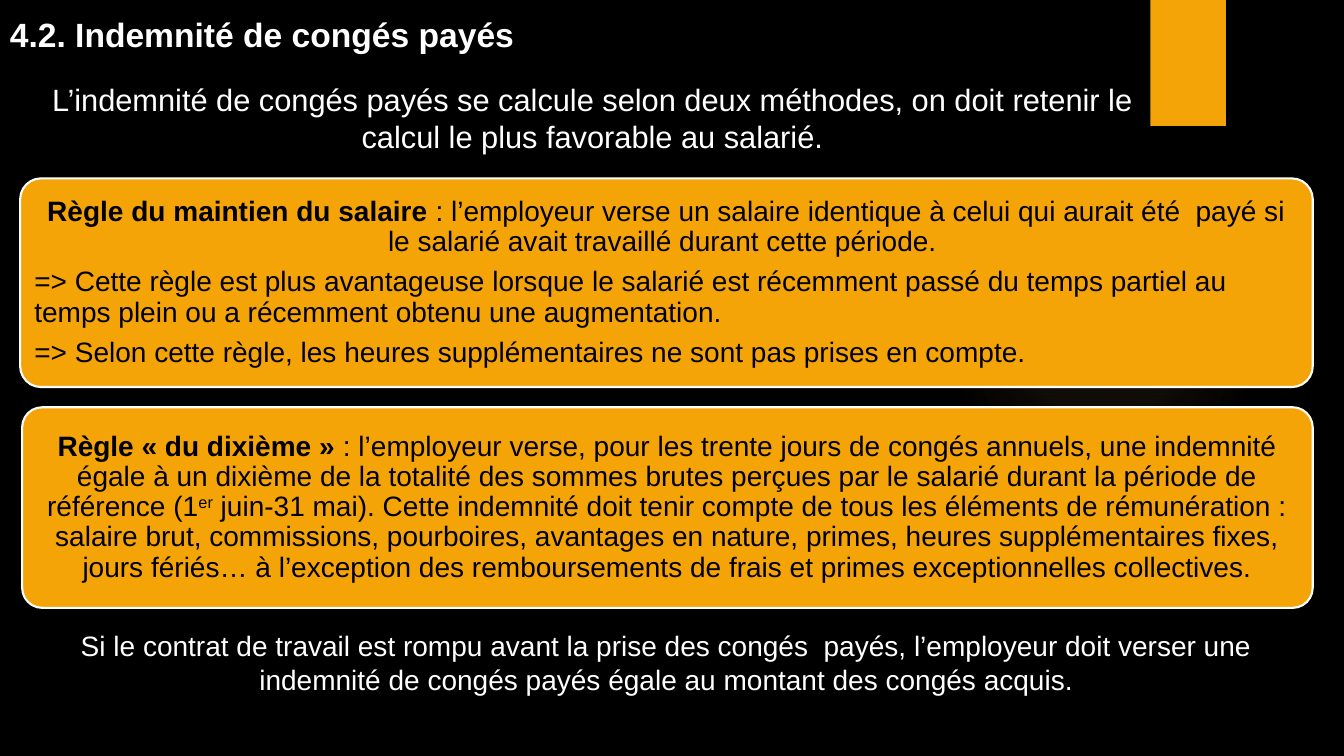
import pptx
import pptx.dml.color
import pptx.enum.shapes
import pptx.enum.text
import pptx.oxml
import pptx.oxml.ns
import pptx.util

Inches = pptx.util.Inches
Pt = pptx.util.Pt
Shape = pptx.enum.shapes.MSO_SHAPE
Align = pptx.enum.text.PP_ALIGN
Anchor = pptx.enum.text.MSO_ANCHOR

COLORS = {"black": "000000", "white": "FFFFFF", "gold": "F5A408", "glow": "FAC96A"}

TITLE = "4.2. Indemnité de congés payés"
INTRO = ("L’indemnité de congés payés se calcule selon deux méthodes, "
         "on doit retenir le calcul le plus favorable au salarié.")
CLOSE = ("Si le contrat de travail est rompu avant la prise des congés  payés, "
         "l’employeur doit verser une indemnité de congés payés égale au montant "
         "des congés acquis.")
SALARY = [
    (Align.CENTER, [
        ("Règle du maintien du salaire ", "bold"),
        (": l’employeur verse un salaire identique à celui qui aurait été  payé "
         "si le salarié avait travaillé durant cette période. ", ""),
    ]),
    (Align.LEFT, [
        ("=> Cette règle est plus avantageuse lorsque le salarié est récemment "
         "passé du temps partiel au temps plein ou a récemment obtenu une "
         "augmentation.", ""),
    ]),
    (Align.LEFT, [
        ("=> Selon cette règle, les heures supplémentaires ne sont pas prises "
         "en compte.", ""),
    ]),
]
TENTH = [
    (Align.CENTER, [
        ("Règle « du dixième » ", "bold"),
        (": l’employeur verse, pour les trente jours de congés annuels, une "
         "indemnité égale à un dixième de la totalité des sommes brutes perçues "
         "par le salarié durant la période de référence (1", ""),
        ("er", "super"),
        (" juin-31 mai). Cette indemnité doit tenir compte de tous les éléments "
         "de rémunération : salaire brut, commissions, pourboires, avantages en "
         "nature, primes, heures supplémentaires fixes, jours fériés… à "
         "l’exception des remboursements de frais et primes exceptionnelles "
         "collectives.", ""),
    ]),
]


def color(name):
    return pptx.dml.color.RGBColor.from_string(COLORS[name])


def style(run, size, tint, bold=False):
    run.font.name = "Arial"
    run.font.size = Pt(size)
    run.font.bold = bold
    run.font.color.rgb = color(tint)


def add_form(slide, kind, box, fill):
    form = slide.shapes.add_shape(kind, *map(Inches, box))
    form.shadow.inherit = False
    form.fill.solid()
    form.fill.fore_color.rgb = color(fill)
    form.line.fill.background()
    return form


def add_glow(slide, box):
    form = add_form(slide, Shape.OVAL, box, "glow")
    stops = "".join(
        f'<a:gs pos="{place * 1000}"><a:srgbClr val="{COLORS["glow"]}">'
        f'<a:alpha val="{alpha * 1000}"/></a:srgbClr></a:gs>'
        for place, alpha in ((0, 7), (36, 6), (69, 0)))
    blend = pptx.oxml.parse_xml(
        f'<a:gradFill {pptx.oxml.ns.nsdecls("a")}><a:gsLst>{stops}</a:gsLst>'
        '<a:path path="circle"><a:fillToRect l="50000" t="50000" r="50000" '
        'b="50000"/></a:path></a:gradFill>')
    props = form._element.spPr
    props.replace(props.find(pptx.oxml.ns.qn("a:solidFill")), blend)


def add_decor(slide):
    add_glow(slide, (9.41, 1.83, 3.08, 3.08))
    add_form(slide, Shape.RECTANGLE, (11.41, 0, 0.75, 1.25), "gold")


def add_note(slide, box, text, size, align=Align.CENTER, bold=False):
    frame = slide.shapes.add_textbox(*map(Inches, box)).text_frame
    frame.word_wrap = True
    frame.text = text
    para = frame.paragraphs[0]
    para.alignment = align
    style(para.runs[0], size, "white", bold)


def add_rule(slide, box, paras):
    card = add_form(slide, Shape.ROUNDED_RECTANGLE, box, "gold")
    card.adjustments[0] = 0.1
    card.line.color.rgb = color("white")
    card.line.width = Pt(1.5)
    frame = card.text_frame
    frame.word_wrap = True
    frame.vertical_anchor = Anchor.MIDDLE
    for side in ("left", "top", "right", "bottom"):
        setattr(frame, f"margin_{side}", Inches(0.08))
    for count, (align, parts) in enumerate(paras):
        para = frame.add_paragraph() if count else frame.paragraphs[0]
        para.alignment = align
        para.line_spacing = 0.9
        para.space_after = Pt(7)
        for text, mark in parts:
            run = para.add_run()
            run.text = text
            style(run, 20, "black", mark == "bold")
            if mark == "super":
                run._r.get_or_add_rPr().set("baseline", "30000")


def add_leave(deck):
    slide = deck.slides.add_slide(deck.slide_layouts[6])
    slide.background.fill.solid()
    slide.background.fill.fore_color.rgb = color("black")
    add_decor(slide)
    add_note(slide, (0, 0.09, 12.16, 0.5), TITLE, 24, Align.JUSTIFY, True)
    add_rule(slide, (0.2, 1.77, 12.82, 2.07), SALARY)
    add_rule(slide, (0.22, 4.04, 12.8, 1.99), TENTH)
    add_note(slide, (0.38, 0.75, 10.99, 0.84), INTRO, 22)
    add_note(slide, (0.32, 6.19, 12.58, 0.77), CLOSE, 20)


def main():
    deck = pptx.Presentation()
    deck.slide_width = Inches(13.33)
    deck.slide_height = Inches(7.5)
    add_leave(deck)
    deck.save("out.pptx")


if __name__ == "__main__":
    main()
